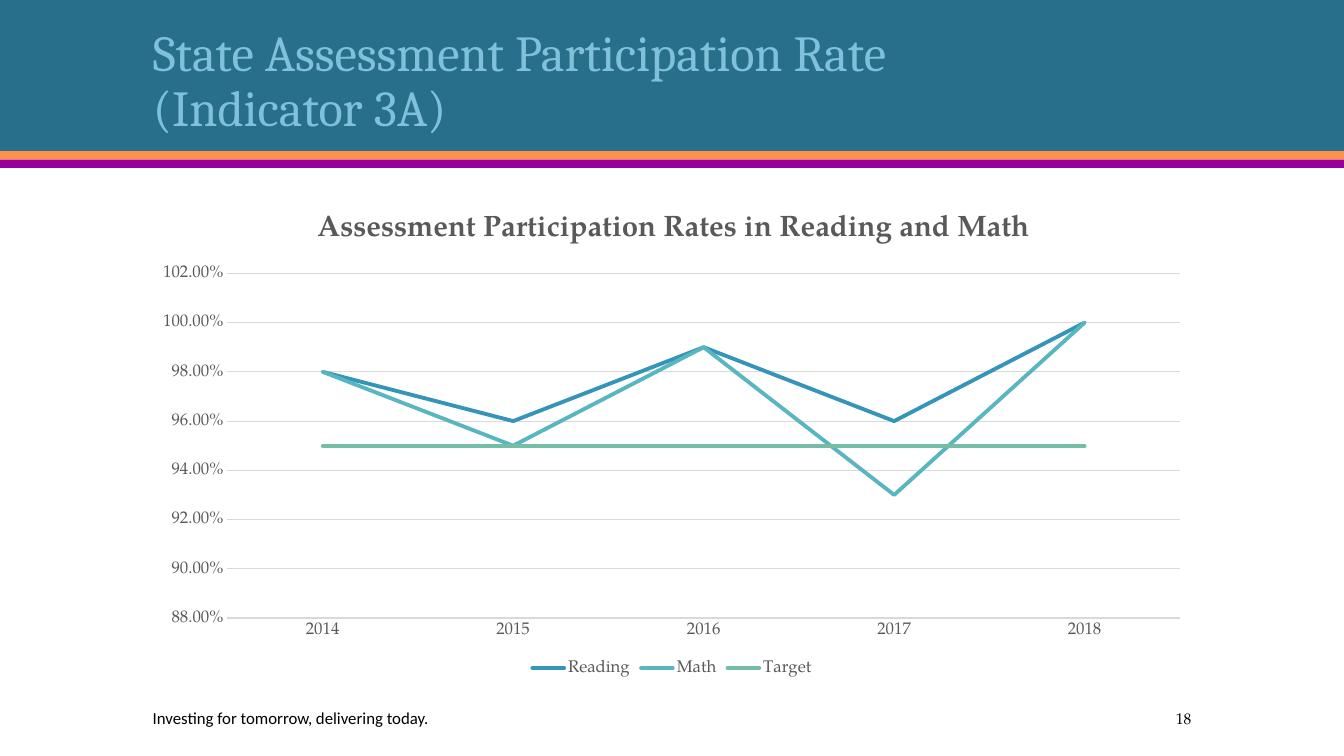
from dataclasses import dataclass

from pptx import Presentation
from pptx import util as u
from pptx.chart.data import CategoryChartData
from pptx.dml.color import RGBColor
from pptx.enum import chart as charts, shapes, text
from pptx.oxml import parse_xml
from pptx.oxml.ns import nsdecls, qn


@dataclass(frozen=True)
class Theme:
    header: str = "276F8B"
    orange: str = "FF914D"
    purple: str = "990099"
    title: str = "7FC1DB"
    black: str = "000000"
    gray: str = "595959"
    grid: str = "D9D9D9"
    series: tuple = ("3494BA", "58B6C0", "75BDA7")
    title_font: str = "Cambria"
    footer_font: str = "Calibri"
    body_font: str = "TeX Gyre Pagella"
    title_size: float = 36
    chart_title_size: float = 21
    label_size: float = 12
    number_size: float = 11


def apply(target, values):
    for name, value in values.items():
        setattr(target, name, value)


def place(element, **fractions):
    """Give a chart part a fixed place, in fractions of the chart."""
    for layout in element.findall(qn("c:layout")):
        element.remove(layout)
    inner = '<c:layoutTarget val="inner"/>' if "w" in fractions else ""
    modes = "".join(f'<c:{side}Mode val="edge"/>' for side in "xy")
    sizes = "".join(f'<c:{side} val="{value}"/>'
                    for side, value in fractions.items())
    layout = parse_xml(f'<c:layout {nsdecls("c")}><c:manualLayout>'
                       f'{inner}{modes}{sizes}</c:manualLayout></c:layout>')
    rich_text = element.find(qn("c:tx"))
    if rich_text is None:
        element.insert(0, layout)
    else:
        rich_text.addnext(layout)


class SlideBuilder:
    def __init__(self, presentation, theme):
        self.theme = theme
        self.slide = presentation.slides.add_slide(presentation.slide_layouts[5])

    def format_font(self, font, name, size, color, bold=False):
        apply(font, {"name": name, "size": u.Pt(size), "bold": bold})
        font.color.rgb = RGBColor.from_string(color)

    def format_line(self, line, color, width):
        line.color.rgb = RGBColor.from_string(color)
        line.width = u.Pt(width)

    def band(self, top, height, color):
        shape = self.slide.shapes.add_shape(
            shapes.MSO_SHAPE.RECTANGLE, 0, u.Pt(top), u.Pt(960), u.Pt(height))
        shape.shadow.inherit = False
        shape.fill.solid()
        shape.fill.fore_color.rgb = RGBColor.from_string(color)
        shape.line.fill.background()

    def title(self, wording, left, top, width, height):
        """Fill the title placeholder and bring it in front of the bands."""
        shape = self.slide.shapes.title
        apply(shape, {"left": u.Pt(left), "top": u.Pt(top),
                      "width": u.Pt(width), "height": u.Pt(height)})
        apply(shape.text_frame, {
            "text": wording, "word_wrap": True,
            "auto_size": text.MSO_AUTO_SIZE.NONE,
            "vertical_anchor": text.MSO_ANCHOR.BOTTOM})
        paragraph = shape.text_frame.paragraphs[0]
        apply(paragraph, {"alignment": text.PP_ALIGN.LEFT, "line_spacing": 0.9})
        for run in paragraph.runs:
            self.format_font(run.font, self.theme.title_font,
                             self.theme.title_size, self.theme.title)
        shape.element.getparent().append(shape.element)

    def label(self, wording, left, width, font, size, alignment):
        shape = self.slide.shapes.add_textbox(
            u.Pt(left), u.Pt(502), u.Pt(width), u.Pt(21.6))
        apply(shape.text_frame, {"text": wording, "word_wrap": True,
                                 "vertical_anchor": text.MSO_ANCHOR.MIDDLE})
        paragraph = shape.text_frame.paragraphs[0]
        paragraph.alignment = alignment
        self.format_font(paragraph.runs[0].font, font, size, self.theme.black)

    def line_chart(self, wording, categories, rates, left, top, width, height):
        theme = self.theme
        data = CategoryChartData(number_format="0.00%")
        data.categories = categories
        for name, values in rates.items():
            data.add_series(name, values)
        chart = self.slide.shapes.add_chart(
            charts.XL_CHART_TYPE.LINE, u.Pt(left), u.Pt(top),
            u.Pt(width), u.Pt(height), data).chart
        self.format_font(chart.font, theme.body_font, theme.label_size, theme.gray)

        apply(chart, {"has_title": True, "has_legend": True})
        chart.chart_title.include_in_layout = False
        chart.chart_title.text_frame.text = wording
        run = chart.chart_title.text_frame.paragraphs[0].runs[0]
        self.format_font(run.font, theme.body_font, theme.chart_title_size,
                         theme.gray, bold=True)
        apply(chart.legend, {"position": charts.XL_LEGEND_POSITION.BOTTOM,
                             "include_in_layout": False})

        for axis in (chart.category_axis, chart.value_axis):
            apply(axis, {"major_tick_mark": charts.XL_TICK_MARK.NONE,
                         "minor_tick_mark": charts.XL_TICK_MARK.NONE})
        for font in (chart.category_axis.tick_labels.font,
                     chart.value_axis.tick_labels.font, chart.legend.font):
            self.format_font(font, theme.body_font, theme.label_size, theme.gray)
        self.format_line(chart.category_axis.format.line, theme.grid, 1)
        apply(chart.value_axis, {"minimum_scale": 0.88, "maximum_scale": 1.02,
                                 "major_unit": 0.02})
        apply(chart.value_axis.tick_labels, {"number_format": "0.00%",
                                             "number_format_is_linked": False})
        chart.value_axis.format.line.fill.background()
        self.format_line(chart.value_axis.major_gridlines.format.line,
                         theme.grid, 0.75)

        plot = chart.plots[0]
        plot.vary_by_categories = False
        for series, color in zip(plot.series, theme.series):
            series.smooth = False
            series.marker.style = charts.XL_MARKER_STYLE.NONE
            self.format_line(series.format.line, color, 2.75)
        for series in chart.element.iter(qn("c:ser")):
            line = series.find(qn("c:spPr")).find(qn("a:ln"))
            line.set("cap", "rnd")
            line.append(parse_xml(f'<a:round {nsdecls("a")}/>'))

        place(next(chart.element.iter(qn("c:title"))), x=0.16, y=0.01)
        place(next(chart.element.iter(qn("c:plotArea"))),
              x=0.08, y=0.15, w=0.9, h=0.72)


def main():
    presentation = Presentation()
    apply(presentation, {"slide_width": u.Pt(960), "slide_height": u.Pt(540)})
    theme = Theme()
    builder = SlideBuilder(presentation, theme)
    left, width = 102, 756

    builder.band(0, 108, theme.header)
    builder.band(108, 6, theme.orange)
    builder.band(114, 6, theme.purple)
    builder.title("State Assessment Participation Rate \v(Indicator 3A)",
                  left, 20, width, 81.5)
    builder.label("Investing for tomorrow, delivering today.", left, 492,
                  theme.footer_font, theme.label_size, text.PP_ALIGN.LEFT)
    builder.label("18", left + width - 108, 108,
                  theme.body_font, theme.number_size, text.PP_ALIGN.RIGHT)

    years = [str(year) for year in range(2014, 2019)]
    rates = {
        "Reading": (0.98, 0.96, 0.99, 0.96, 1),
        "Math": (0.98, 0.95, 0.99, 0.93, 1),
        "Target": (0.95,) * len(years),
    }
    builder.line_chart("Assessment Participation Rates in Reading and Math",
                       years, rates, left, 144, width, 342)
    presentation.save("out.pptx")


if __name__ == "__main__":
    main()
